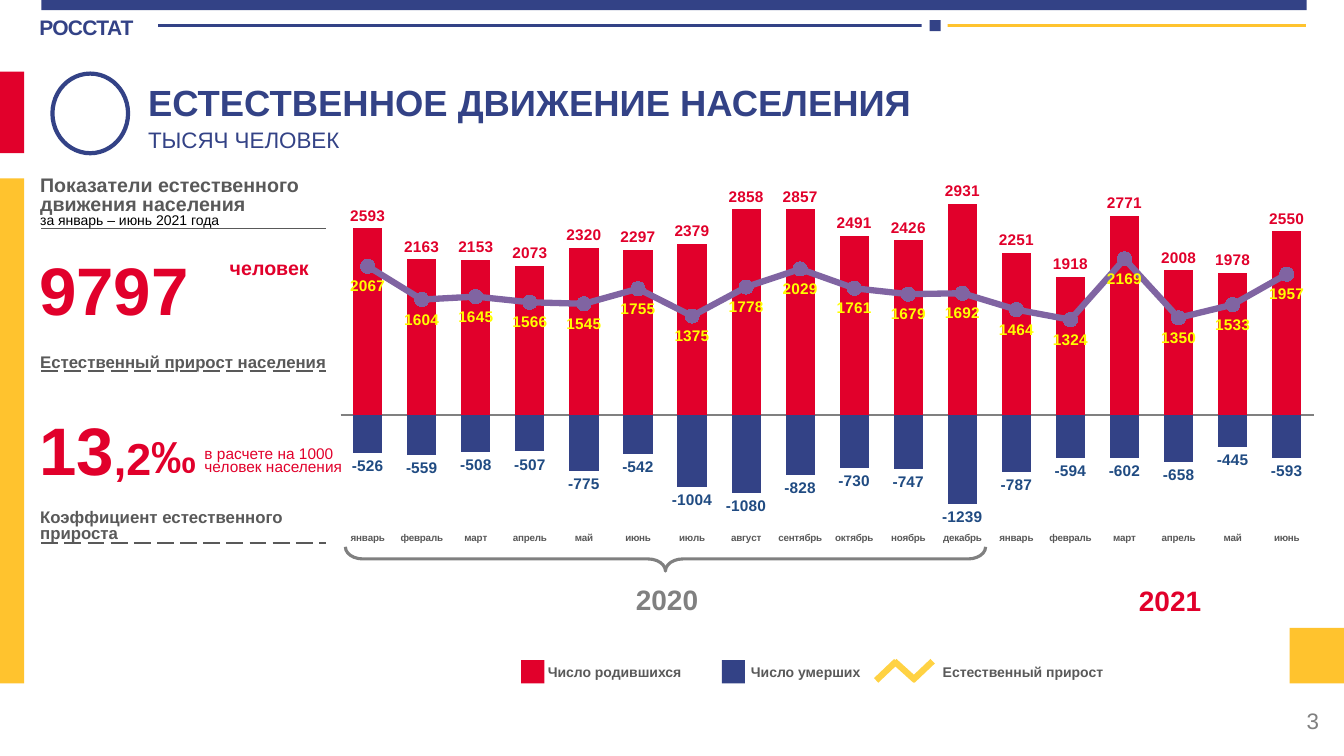
import pptx
import pptx.chart.data
import pptx.dml.color
import pptx.enum.chart
import pptx.enum.dml
import pptx.enum.shapes
import pptx.enum.text
import pptx.oxml
import pptx.oxml.ns
import pptx.util

Inches, Pt = pptx.util.Inches, pptx.util.Pt
RGB = pptx.dml.color.RGBColor
qn = pptx.oxml.ns.qn
SHAPE = pptx.enum.shapes.MSO_SHAPE
ALIGN = pptx.enum.text.PP_ALIGN
MIDDLE = pptx.enum.text.MSO_ANCHOR.MIDDLE
LABEL = pptx.enum.chart.XL_LABEL_POSITION
DASH = pptx.enum.dml.MSO_LINE.LONG_DASH

BLUE = RGB(0x33, 0x42, 0x86)
RED = RGB(0xE1, 0x00, 0x2B)
AMBER = RGB(0xFF, 0xC3, 0x2E)
GOLD = RGB(0xFF, 0xD2, 0x43)
YELLOW = RGB(0xFF, 0xFF, 0x00)
PURPLE = RGB(0x80, 0x64, 0xA2)
NAVY = RGB(0x20, 0x4B, 0x82)
GRAY = RGB(0x80, 0x80, 0x80)
DARK = RGB(0x59, 0x59, 0x59)
BLACK = RGB(0, 0, 0)
WHITE = RGB(0xFF, 0xFF, 0xFF)

MONTHS = ["январь", "февраль", "март", "апрель", "май", "июнь", "июль", "август",
          "сентябрь", "октябрь", "ноябрь", "декабрь"]
BIRTHS = [2593, 2163, 2153, 2073, 2320, 2297, 2379, 2858, 2857,
          2491, 2426, 2931, 2251, 1918, 2771, 2008, 1978, 2550]
DEATHS = [-526, -559, -508, -507, -775, -542, -1004, -1080, -828,
          -730, -747, -1239, -787, -594, -602, -658, -445, -593]
GROWTH = [2067, 1604, 1645, 1566, 1545, 1755, 1375, 1778, 2029,
          1761, 1679, 1692, 1464, 1324, 2169, 1350, 1533, 1957]
CHART_NS = 'xmlns:c="http://schemas.openxmlformats.org/drawingml/2006/chart"'


class SlideBuilder:
    font_name = "Arial"

    def __init__(self, prs):
        self.s = prs.slides.add_slide(prs.slide_layouts[6])

    def style_font(self, font, size, color, bold=False):
        values = {"name": self.font_name, "size": Pt(size), "bold": bold}
        for key, value in values.items():
            setattr(font, key, value)
        font.color.rgb = color

    def shape(self, kind, box, fill=None, line=None, width=1):
        sp = self.s.shapes.add_shape(kind, *map(Inches, box))
        sp.shadow.inherit = False
        if fill is None:
            sp.fill.background()
        else:
            sp.fill.solid()
            sp.fill.fore_color.rgb = fill
        if line is None:
            sp.line.fill.background()
        else:
            sp.line.color.rgb = line
            sp.line.width = Pt(width)
        return sp

    def line(self, x1, y1, x2, y2, color, width, dash=None):
        cx = self.s.shapes.add_connector(pptx.enum.shapes.MSO_CONNECTOR.STRAIGHT,
                                         *map(Inches, (x1, y1, x2, y2)))
        cx.line.color.rgb = color
        cx.line.width = Pt(width)
        if dash is not None:
            cx.line.dash_style = dash
        cx._element.spPr.append(pptx.oxml.parse_xml(
            '<a:effectLst xmlns:a="http://schemas.openxmlformats.org/drawingml/2006/main"/>'))

    def text(self, box, *paragraphs, wrap=True, frame=None, **para):
        """Each paragraph is a list of runs: (text, size, color, bold)."""
        tf = self.s.shapes.add_textbox(*map(Inches, box)).text_frame
        for key, value in {"word_wrap": wrap, **(frame or {})}.items():
            setattr(tf, key, value)
        for i, runs in enumerate(paragraphs):
            p = tf.add_paragraph() if i else tf.paragraphs[0]
            for key, value in para.items():
                setattr(p, key, value)
            for content, *style in runs:
                r = p.add_run()
                r.text = content
                self.style_font(r.font, *style)
        return tf

    def chart(self, box):
        """Columns of births and deaths with a line of natural growth."""
        data = pptx.chart.data.CategoryChartData(number_format="0")
        data.categories = MONTHS + MONTHS[:6]
        for name, values in (("Число родившихся", BIRTHS), ("Число умерших", DEATHS),
                             ("Естественный прирост", GROWTH)):
            data.add_series(name, values)
        chart = self.s.shapes.add_chart(pptx.enum.chart.XL_CHART_TYPE.COLUMN_CLUSTERED,
                                        *map(Inches, box), data).chart
        chart.has_legend = chart.has_title = False
        self.style_font(chart.font, 10, BLACK)
        bars = chart.plots[0]
        for key, value in {"gap_width": 85, "overlap": 100, "vary_by_categories": False}.items():
            setattr(bars, key, value)
        self.style_axes(chart)
        self.set_plot_area(chart)
        growth = self.move_to_line(chart)
        for series, color in zip(bars.series, (RED, BLUE)):
            series.invert_if_negative = False
            series.format.fill.solid()
            series.format.fill.fore_color.rgb = color
        growth.smooth = False
        growth.format.line.color.rgb = PURPLE
        growth.format.line.width = Pt(4.5)
        growth.marker.style = pptx.enum.chart.XL_MARKER_STYLE.CIRCLE
        growth.marker.size = 10
        for part in (growth.marker.format.fill, growth.marker.format.line.fill):
            part.solid()
            part.fore_color.rgb = PURPLE
        labels = ((RED, LABEL.OUTSIDE_END), (NAVY, LABEL.OUTSIDE_END), (YELLOW, LABEL.BELOW))
        for series, (color, position) in zip([*bars.series, growth], labels):
            dl = series.data_labels
            values = {"show_value": True, "position": position, "number_format": "0",
                      "number_format_is_linked": False}
            for key, value in values.items():
                setattr(dl, key, value)
            self.style_font(dl.font, 11, color, True)

    def style_axes(self, chart):
        none = pptx.enum.chart.XL_TICK_MARK.NONE
        cat, val = chart.category_axis, chart.value_axis
        cat.major_tick_mark = cat.minor_tick_mark = none
        cat.tick_label_position = pptx.enum.chart.XL_TICK_LABEL_POSITION.LOW
        self.style_font(cat.tick_labels.font, 7, DARK, True)
        cat.format.line.color.rgb = GRAY
        cat.format.line.width = Pt(1.25)
        values = {"minimum_scale": -1500, "maximum_scale": 3500,
                  "has_major_gridlines": False, "visible": False}
        for key, value in values.items():
            setattr(val, key, value)

    def set_plot_area(self, chart):
        area = chart._chartSpace.chart.plotArea
        for old in area.findall(qn("c:layout")):
            area.remove(old)
        places = "".join(f'<c:{k} val="{v}"/>' for k, v in (
            ("layoutTarget", "inner"), ("xMode", "edge"), ("yMode", "edge"),
            ("x", 0.015), ("y", 0.081), ("w", 0.969), ("h", 0.675)))
        area.insert(0, pptx.oxml.parse_xml(
            f"<c:layout {CHART_NS}><c:manualLayout>{places}</c:manualLayout></c:layout>"))

    def move_to_line(self, chart):
        """Move the last column series to a line plot on the same axes."""
        bar = chart._chartSpace.chart.plotArea.find(qn("c:barChart"))
        ser = bar.findall(qn("c:ser"))[-1]
        for invert in ser.findall(qn("c:invertIfNegative")):
            ser.remove(invert)
        axes = "".join(f'<c:axId val="{a.get("val")}"/>' for a in bar.findall(qn("c:axId")))
        line = pptx.oxml.parse_xml(
            f'<c:lineChart {CHART_NS}><c:grouping val="standard"/><c:varyColors val="0"/>'
            f'<c:marker val="1"/>{axes}</c:lineChart>')
        line.insert(2, ser)
        bar.addnext(line)
        return chart.plots[1].series[0]


def main():
    prs = pptx.Presentation()
    prs.slide_width, prs.slide_height = Inches(13.33), Inches(7.5)
    b = SlideBuilder(prs)

    agency = b.text((0.39, 0.13, 1.15, 0.32), [("РОССТАТ", 15, BLUE, True)],
                    frame={"margin_left": 0, "margin_right": 0, "margin_bottom": 0,
                           "margin_top": Inches(0.01)})
    agency.paragraphs[0].runs[0]._r.get_or_add_rPr().set("spc", "-50")
    for box, color in (((0.41, 0, 12.55, 0.1), BLUE), ((0, 0.71, 0.24, 0.81), RED),
                       ((0, 1.77, 0.24, 5.01), AMBER)):
        b.shape(SHAPE.RECTANGLE, box, color)
    b.chart((3.23, 1.19, 9.96, 5.29))
    b.text((10.18, 6.95, 3, 0.4), [("3", 16, GRAY)],
           frame={"vertical_anchor": MIDDLE}, alignment=ALIGN.RIGHT)
    title = b.text((1.37, 0.75, 8.7, 0.61), [("ЕСТЕСТВЕННОЕ ДВИЖЕНИЕ НАСЕЛЕНИЯ", 26, BLUE, True)],
                   [("ТЫСЯЧ ЧЕЛОВЕК", 16, BLUE)])
    title.paragraphs[1].space_before = Pt(10)
    title.paragraphs[1].line_spacing = 0.5
    b.shape(SHAPE.RECTANGLE, (12.79, 6.23, 0.54, 0.55), AMBER)
    b.line(1.57, 0.25, 9.33, 0.25, BLUE, 2)
    b.line(9.19, 0.25, 12.95, 0.25, AMBER, 2)
    b.shape(SHAPE.RECTANGLE, (9.14, 0.2, 0.26, 0.11), WHITE)
    b.shape(SHAPE.RECTANGLE, (9.22, 0.2, 0.11, 0.11), BLUE)
    b.shape(SHAPE.OVAL, (0.52, 0.73, 0.75, 0.79), line=BLUE, width=3)

    for year, box, color in (("2020", (6.04, 5.73, 1.15, 0.44), GRAY),
                             ("2021", (11.05, 5.74, 1.11, 0.44), RED)):
        b.text(box, [(year, 20, color, True)], alignment=ALIGN.CENTER)
    brace = b.shape(SHAPE.LEFT_BRACE, (6.48, 2.37, 0.24, 6.35), line=GRAY, width=2.25)
    brace.rotation = 270
    brace.adjustments[0] = 0.72

    mid = {"vertical_anchor": MIDDLE}
    b.text((0.29, 2.57, 2.16, 0.59), [("9797", 48, RED, True)], frame=mid)
    b.text((0.29, 4.16, 1.44, 0.59), [("13", 48, RED, True), (",2", 32, RED, True)], frame=mid)
    b.text((1.4, 4.2, 0.7, 0.64), [("‰", 32, RED, True)])
    b.text((2.18, 2.49, 1.05, 0.34), [("человек", 14, RED, True)])
    b.text((1.93, 4.41, 1.66, 0.36), [("в расчете на 1000 человек населения", 11, RED)],
           line_spacing=0.7)
    b.text((0.3, 2.05, 2, 0.27), [("за январь – июнь 2021 года", 10, BLACK)], wrap=False)
    for caption, y, width, size in (("Показатели естественного движения населения", 1.74, 2.93, 14),
                                    ("Естественный прирост населения", 3.4, 3.15, 12),
                                    ("Коэффициент естественного прироста", 5.02, 3.15, 12)):
        b.text((0.3, y, width, 0.41), [(caption, size, DARK, True)], frame=mid, line_spacing=0.8)
    for y, width, dash in ((2.27, 1, None), (3.68, 1.5, DASH), (5.39, 1.5, DASH)):
        b.line(0.41, y, 3.23, y, DARK, width, dash)

    for x, color in ((5.17, RED), (7.16, BLUE)):
        b.shape(SHAPE.RECTANGLE, (x, 6.55, 0.23, 0.23), color)
    for x1, x2 in ((8.69, 8.89), (9.05, 9.25), (9.08, 8.87)):
        b.line(x1, 6.75, x2, 6.56, GOLD, 4.5)
    for label, x, width in (("Число родившихся", 5.32, 1.55), ("Число умерших", 7.34, 1.3),
                            ("Естественный прирост", 9.24, 1.81)):
        b.text((x, 6.53, width, 0.27), [(label, 10, DARK, True)], wrap=False,
               alignment=ALIGN.CENTER)
    prs.save("out.pptx")


if __name__ == "__main__":
    main()
